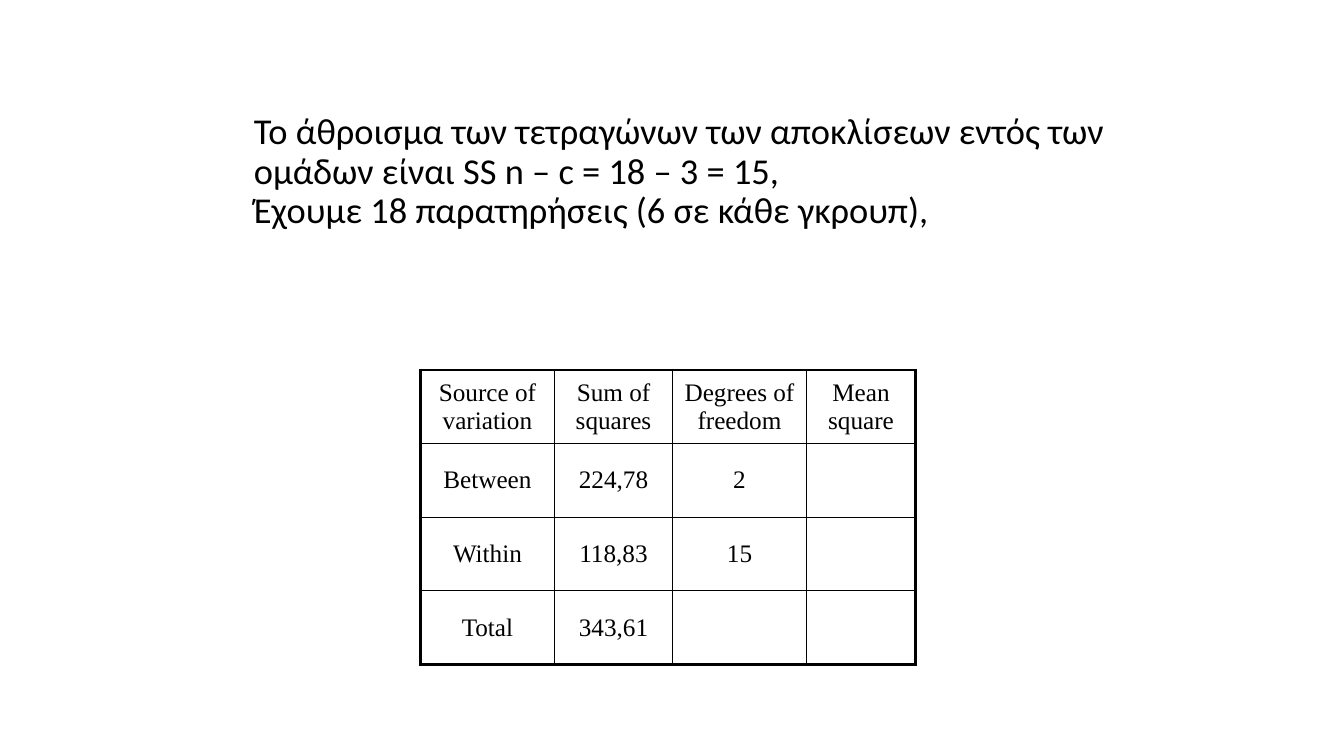
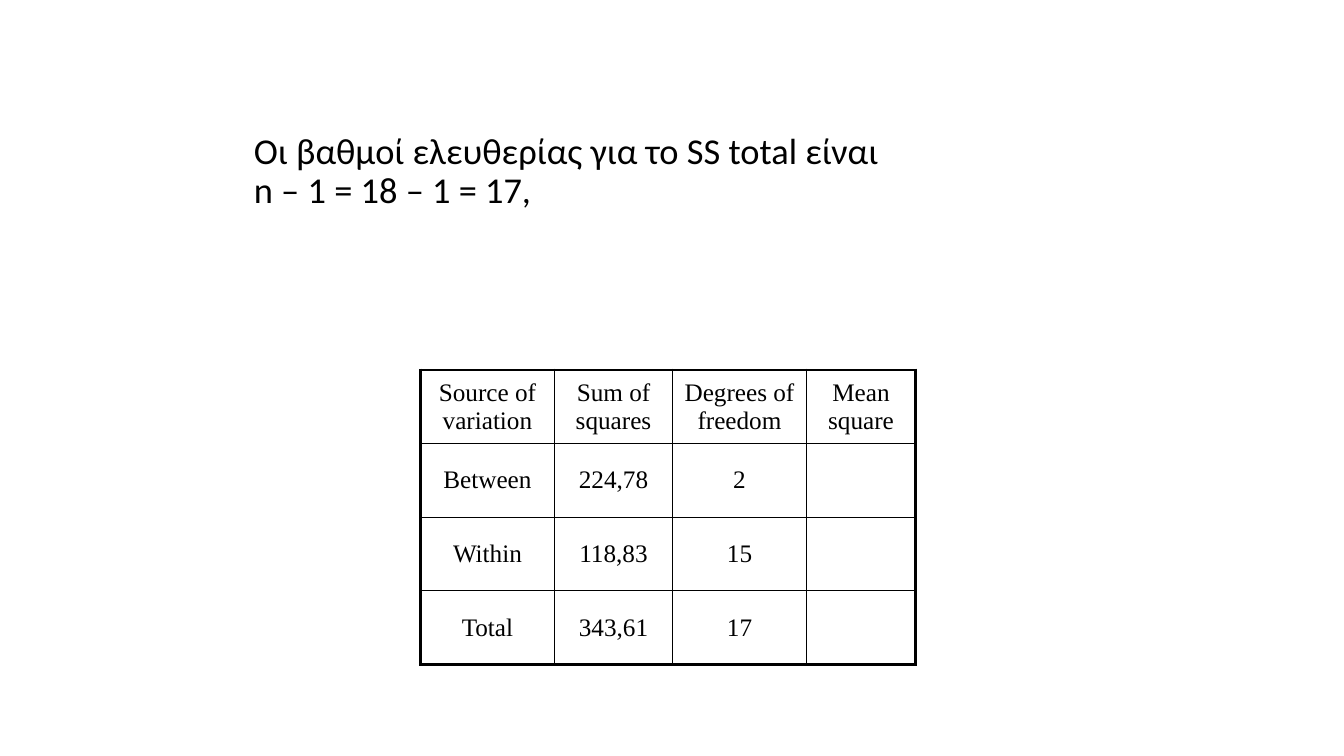
from pptx import Presentation
from pptx.dml.color import RGBColor
from pptx.enum import text as t
from pptx.oxml.ns import qn
from pptx.util import Inches, Pt
from lxml import etree

BLACK = RGBColor(0, 0, 0)
WHITE = RGBColor(255, 255, 255)
COLUMN_WIDTHS = (1.33, 1.17, 1.33, 1.08)
ROW_HEIGHT = 0.73
INNER_LINE, OUTER_LINE = 1, 2.25
HEADINGS = ("Source of variation", "Sum of squares", "Degrees of freedom", "Mean square")
SLIDES = (
    (("Το άθροισμα των τετραγώνων των αποκλίσεων εντός των ομάδων είναι SS n – c = 18 – 3 = 15,",
      "Έχουμε 18 παρατηρήσεις (6 σε κάθε γκρουπ),"), ""),
    (("Οι βαθμοί ελευθερίας για το SS total είναι",
      "n – 1 = 18 – 1 = 17,"), "17"),
)


def write(frame, *lines, font, size, align=t.PP_ALIGN.LEFT, spacing=1.0):
    paragraph = frame.paragraphs[0]
    paragraph.alignment = align
    paragraph.line_spacing = spacing
    for index, line in enumerate(lines):
        if index:
            paragraph.add_line_break()
        run = paragraph.add_run()
        run.text = line
        run.font.name = font
        run.font.size = Pt(size)
        run.font.color.rgb = BLACK


def add_title(slide, lines):
    title = slide.shapes.add_textbox(Inches(2.42), Inches(0.92), Inches(8.67), Inches(1.58))
    frame = title.text_frame
    frame.word_wrap = True
    frame.vertical_anchor = t.MSO_ANCHOR.MIDDLE
    write(frame, *lines, font="Calibri", size=26, spacing=0.9)


def set_borders(cell, outer_sides):
    properties = cell._tc.get_or_add_tcPr()
    for index, (side, is_outer) in enumerate(zip(("lnL", "lnR", "lnT", "lnB"), outer_sides)):
        width = Pt(OUTER_LINE if is_outer else INNER_LINE)
        line = etree.Element(qn(f"a:{side}"), w=str(width))
        fill = etree.SubElement(line, qn("a:solidFill"))
        etree.SubElement(fill, qn("a:srgbClr"), val=str(BLACK))
        properties.insert(index, line)


def add_variance_table(slide, rows):
    last_row, last_column = len(rows) - 1, len(COLUMN_WIDTHS) - 1
    table = slide.shapes.add_table(
        len(rows), len(COLUMN_WIDTHS), Inches(4.17), Inches(3.67),
        Inches(sum(COLUMN_WIDTHS)), Inches(ROW_HEIGHT * len(rows))).table
    table.first_row = table.horz_banding = False
    for column, width in zip(table.columns, COLUMN_WIDTHS):
        column.width = Inches(width)
    for r, values in enumerate(rows):
        table.rows[r].height = Inches(ROW_HEIGHT)
        for c, value in enumerate(values):
            cell = table.cell(r, c)
            cell.fill.solid()
            cell.fill.fore_color.rgb = WHITE
            cell.vertical_anchor = t.MSO_ANCHOR.MIDDLE
            set_borders(cell, (c == 0, c == last_column, r == 0, r == last_row))
            if value:
                write(cell.text_frame, value, font="Times New Roman", size=18,
                      align=t.PP_ALIGN.CENTER)


def main():
    deck = Presentation()
    deck.slide_width, deck.slide_height = Inches(13.33), Inches(7.5)
    for title_lines, total_freedom in SLIDES:
        slide = deck.slides.add_slide(deck.slide_layouts[6])
        add_title(slide, title_lines)
        add_variance_table(slide, (
            HEADINGS,
            ("Between", "224,78", "2", ""),
            ("Within", "118,83", "15", ""),
            ("Total", "343,61", total_freedom, ""),
        ))
    deck.save("out.pptx")


if __name__ == "__main__":
    main()
